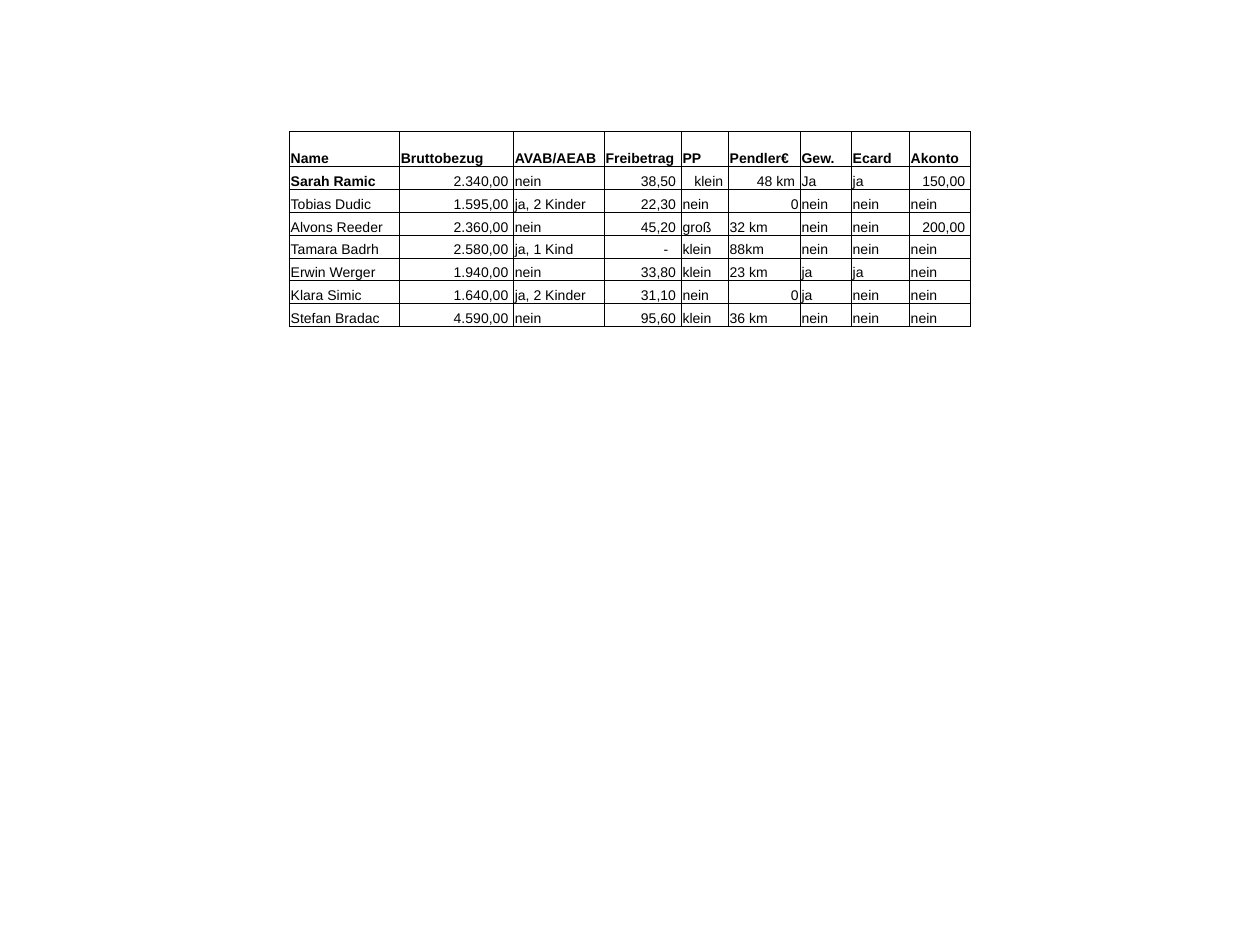
from dataclasses import dataclass

from lxml import etree
from pptx import Presentation
from pptx import util as u
from pptx.dml.color import RGBColor
from pptx.enum import text
from pptx.oxml.ns import qn

COLORS = {"ink": "000000", "border": "000000"}
FONT = "Arial"
INSET = 0.03
COL_WIDTHS = [2.22, 2.3, 1.83, 1.55, 0.95, 1.45, 1.03, 1.17, 1.23]
HEADER_HEIGHT, ROW_HEIGHT = 0.71, 0.46


@dataclass(frozen=True)
class Entry:
    text: str
    right: bool = False
    gap: float = INSET


def padded(value: str, gap: float = 0.1) -> Entry:
    return Entry(value, right=True, gap=gap)


ZERO = Entry("0", right=True)
NO_ALLOWANCE = padded("-", gap=0.26)

HEADER = ["Name", "Bruttobezug", "AVAB/AEAB", "Freibetrag", "PP",
          "Pendler€", "Gew.", "Ecard", "Akonto"]
EMPLOYEES = [
    ["Sarah Ramic", padded("2.340,00"), "nein", padded("38,50"),
     padded("klein"), padded("48 km"), "Ja", "ja", padded("150,00")],
    ["Tobias Dudic", padded("1.595,00"), "ja, 2 Kinder", padded("22,30"),
     "nein", ZERO, "nein", "nein", "nein"],
    ["Alvons Reeder", padded("2.360,00"), "nein", padded("45,20"),
     "groß", "32 km", "nein", "nein", padded("200,00")],
    ["Tamara Badrh", padded("2.580,00"), "ja, 1 Kind", NO_ALLOWANCE,
     "klein", "88km", "nein", "nein", "nein"],
    ["Erwin Werger", padded("1.940,00"), "nein", padded("33,80"),
     "klein", "23 km", "ja", "ja", "nein"],
    ["Klara Simic", padded("1.640,00"), "ja, 2 Kinder", padded("31,10"),
     "nein", ZERO, "ja", "nein", "nein"],
    ["Stefan Bradac", padded("4.590,00"), "nein", padded("95,60"),
     "klein", "36 km", "nein", "nein", "nein"],
]


def set_borders(cell, color: str, width: float) -> None:
    tc_pr = cell._tc.get_or_add_tcPr()
    for side in ("a:lnL", "a:lnR", "a:lnT", "a:lnB"):
        ln = etree.SubElement(tc_pr, qn(side), w=str(u.Pt(width)))
        fill = etree.SubElement(ln, qn("a:solidFill"))
        etree.SubElement(fill, qn("a:srgbClr"), val=color)


def write_text(cell, value: str, *, bold: bool = False, right: bool = False,
               size: float = 8, color: str = COLORS["ink"]) -> None:
    p = cell.text_frame.paragraphs[0]
    p.alignment = text.PP_ALIGN.RIGHT if right else text.PP_ALIGN.LEFT
    r = p.add_run()
    r.text = value
    r.font.name = FONT
    r.font.size = u.Pt(size)
    r.font.bold = bold
    r.font.color.rgb = RGBColor.from_string(color)


def draw_cell(cell, entry: Entry, bold: bool) -> None:
    cell.margin_left = cell.margin_top = u.Cm(INSET)
    cell.margin_right = u.Cm(entry.gap)
    cell.margin_bottom = 0
    cell.vertical_anchor = text.MSO_ANCHOR.BOTTOM
    set_borders(cell, COLORS["border"], 0.5)
    cell.fill.background()
    write_text(cell, entry.text, bold=bold, right=entry.right)


def draw_payroll(s, left: float, top: float) -> None:
    rows = [HEADER, *EMPLOYEES]
    heights = [HEADER_HEIGHT] + [ROW_HEIGHT] * len(EMPLOYEES)
    table = s.shapes.add_table(
        len(rows), len(HEADER), u.Cm(left), u.Cm(top),
        u.Cm(sum(COL_WIDTHS)), u.Cm(sum(heights))).table
    table.first_row = table.horz_banding = False
    for column, width in zip(table.columns, COL_WIDTHS):
        column.width = u.Cm(width)
    for i, (row, height) in enumerate(zip(rows, heights)):
        table.rows[i].height = u.Cm(height)
        for j, value in enumerate(row):
            entry = value if isinstance(value, Entry) else Entry(value)
            draw_cell(table.cell(i, j), entry, bold=i == 0 or (i, j) == (1, 0))


def main() -> None:
    prs = Presentation()
    prs.slide_width, prs.slide_height = u.Cm(25.4), u.Cm(19.05)
    s = prs.slides.add_slide(prs.slide_layouts[6])
    draw_payroll(s, left=5.83, top=2.65)
    prs.save("out.pptx")


if __name__ == "__main__":
    main()
